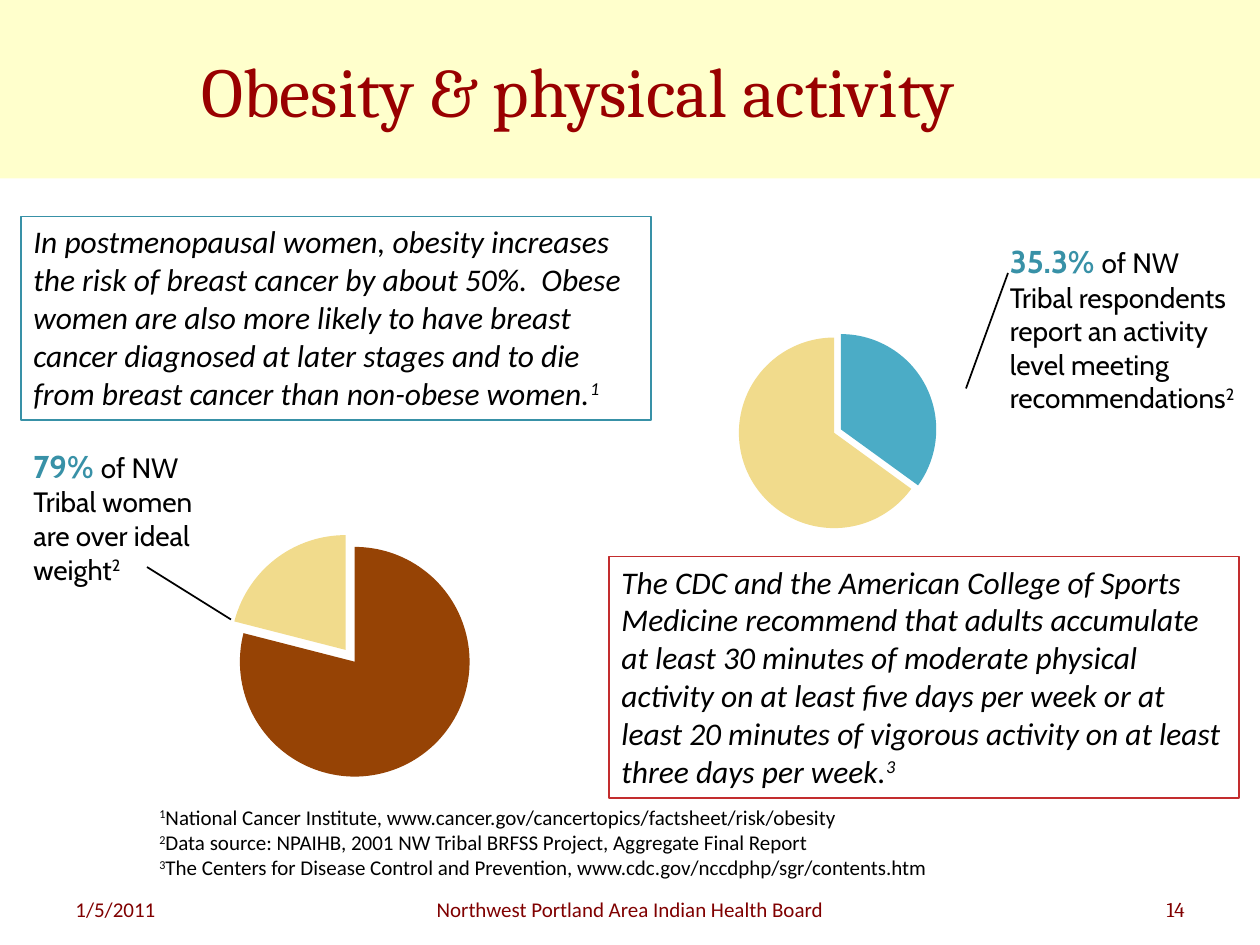
"""Build a slide on obesity and physical activity with two pie charts."""
from lxml.etree import SubElement
from pptx import Presentation
from pptx.chart.data import CategoryChartData
from pptx.dml.color import RGBColor
from pptx.enum.chart import XL_CHART_TYPE
from pptx.enum.shapes import MSO_CONNECTOR, MSO_SHAPE
from pptx.enum.text import MSO_ANCHOR, MSO_AUTO_SIZE, PP_ALIGN
from pptx.oxml import parse_xml
from pptx.oxml.ns import nsdecls, qn
from pptx.util import Inches, Pt

CREAM = RGBColor(0xFF, 0xFF, 0xCC)
RED = RGBColor(0x99, 0x00, 0x00)
MAROON = RGBColor(0x80, 0x00, 0x00)
BLACK = RGBColor(0x00, 0x00, 0x00)
TEAL = RGBColor(0x38, 0x91, 0xA7)
CRIMSON = RGBColor(0xC3, 0x2D, 0x2E)
BROWN = RGBColor(0x96, 0x43, 0x05)
SAND = RGBColor(0xF1, 0xDB, 0x8C)
BLUE = RGBColor(0x4B, 0xAC, 0xC6)

deck = Presentation()
deck.slide_width, deck.slide_height = Inches(10), Inches(7.5)
COLUMN, ROW = deck.slide_width / 120, deck.slide_height / 90


def cells(left, top, width, height):
    """Turn grid columns and rows into lengths."""
    return int(left * COLUMN), int(top * ROW), int(width * COLUMN), int(height * ROW)


def write(para, spans):
    """Add spans of text, size, font, colour and style letters to a paragraph."""
    for text, size, font, colour, style in spans:
        span = para.add_run()
        span.text = text
        span.font.size, span.font.name = Pt(size), font
        span.font.color.rgb = colour
        span.font.bold, span.font.italic = "b" in style, "i" in style
        if "^" in style:
            span.font._element.set("baseline", "30000")


page = deck.slides.add_slide(deck.slide_layouts[5])
title = page.shapes.title
title.left, title.top, title.width, title.height = cells(18, 1, 96, 15)
title.text_frame.vertical_anchor = MSO_ANCHOR.MIDDLE
title.text_frame.paragraphs[0].alignment = PP_ALIGN.LEFT
write(title.text_frame.paragraphs[0],
      [("Obesity & physical activity", 40, "Cambria", RED, "")])

band = page.shapes.add_shape(MSO_SHAPE.RECTANGLE, *cells(0, 0, 120, 17))
band.shadow.inherit = False
band.fill.solid()
band.fill.fore_color.rgb = CREAM
band.line.fill.background()
title._element.addprevious(band._element)

FOOTERS = [
    (35, 50, "Northwest Portland Area Indian Health Board", "Calibri", PP_ALIGN.CENTER),
    (6, 28, "1/5/2011", "Calibri", PP_ALIGN.LEFT),
    (86, 28, "14", "Cambria", PP_ALIGN.RIGHT),
]
for left, width, text, font, alignment in FOOTERS:
    box = page.shapes.add_textbox(*cells(left, 84.8, width, 5.2))
    box.text_frame.word_wrap = True
    box.text_frame.paragraphs[0].alignment = alignment
    write(box.text_frame.paragraphs[0], [(text, 12, font, MAROON, "")])

STATEMENTS = [
    ((2, 20.6, 60, 19.4), TEAL, "1",
     "In postmenopausal women, obesity increases the risk of breast cancer by about "
     "50%.  Obese women are also more likely to have breast cancer diagnosed at later "
     "stages and to die from breast cancer than non-obese women."),
    ((58, 53, 60, 23), CRIMSON, "3",
     "The CDC and the American College of Sports Medicine recommend that adults "
     "accumulate at least 30 minutes of moderate physical activity on at least five "
     "days per week or at least 20 minutes of vigorous activity on at least three "
     "days per week."),
]
for place, colour, note, text in STATEMENTS:
    box = page.shapes.add_shape(MSO_SHAPE.RECTANGLE, *cells(*place))
    box.shadow.inherit = False
    box.fill.background()
    box.line.color.rgb, box.line.width = colour, Pt(0.75)
    frame = box.text_frame
    frame.word_wrap, frame.auto_size = True, MSO_AUTO_SIZE.SHAPE_TO_FIT_TEXT
    frame.vertical_anchor = MSO_ANCHOR.TOP
    frame.paragraphs[0].alignment = PP_ALIGN.LEFT
    write(frame.paragraphs[0], [(text, 18, "Calibri", BLACK, "i"),
                                (note, 18, "Calibri", BLACK, "i^")])

SOURCES = [
    "National Cancer Institute, www.cancer.gov/cancertopics/factsheet/risk/obesity",
    "Data source: NPAIHB, 2001 NW Tribal BRFSS Project, Aggregate Final Report",
    "The Centers for Disease Control and Prevention, www.cdc.gov/nccdphp/sgr/contents.htm",
]
box = page.shapes.add_textbox(*cells(14, 76, 108, 12.1))
frame = box.text_frame
frame.word_wrap, frame.auto_size = True, MSO_AUTO_SIZE.SHAPE_TO_FIT_TEXT
for number, source in enumerate(SOURCES, 1):
    para = frame.paragraphs[0] if number == 1 else frame.add_paragraph()
    write(para, [(str(number), 12, "Calibri", BLACK, "^"),
                 (source, 12, "Calibri", BLACK, "")])

CALLOUTS = [
    ((2, 42, 21, 14.5), "79% ", "of NW Tribal women are over ideal weight",
     (14, 54, 22, 59)),
    ((95, 22.5, 25, 21.4), "35.3% ",
     "of NW Tribal respondents report an activity level meeting recommendations",
     (96, 26, 92, 37)),
]
for place, share, text, ends in CALLOUTS:
    box = page.shapes.add_textbox(*cells(*place))
    frame = box.text_frame
    frame.word_wrap, frame.auto_size = True, MSO_AUTO_SIZE.SHAPE_TO_FIT_TEXT
    write(frame.paragraphs[0], [(share, 18, "Cabin", TEAL, "b"),
                                (text, 16, "Cabin", BLACK, ""),
                                ("2", 16, "Cabin", BLACK, "^")])
    leader = page.shapes.add_connector(MSO_CONNECTOR.STRAIGHT, *cells(*ends))
    leader.line.color.rgb, leader.line.width = BLACK, Pt(1)
    SubElement(leader._element.spPr, qn("a:effectLst"))

PIES = [
    ((15, 48, 39, 26), (79, 21), (BROWN, SAND), 1, (1, 12),
     (0.03, 0.15, 0.9, 0.85)),
    ((60, 30, 39, 22), (35, 65), (BLUE, SAND), 3, (0, 5),
     (0.05, 0.08, 0.91, 0.85)),
]
for place, values, colours, spread, (pulled, distance), plot_area in PIES:
    data = CategoryChartData()
    data.categories = ["1", "2"]
    data.add_series("Series 1", values)
    chart = page.shapes.add_chart(XL_CHART_TYPE.PIE, *cells(*place), data).chart
    chart.has_legend = chart.has_title = False
    chart.font.size, chart.font.name = Pt(10), "Cabin"
    chart.font.color.rgb = BLACK
    plot = chart.plots[0]
    plot.vary_by_categories = True
    series = plot.series[0]
    for index, colour in enumerate(colours):
        fill = series.points[index].format.fill
        fill.solid()
        fill.fore_color.rgb = colour
    slices = series._element.findall(qn("c:dPt"))
    slices[0].addprevious(parse_xml(f'<c:explosion {nsdecls("c")} val="{spread}"/>'))
    for index, piece in enumerate(slices):
        reach = distance if index == pulled else spread
        piece.find(qn("c:spPr")).addprevious(
            parse_xml(f'<c:explosion {nsdecls("c")} val="{reach}"/>'))
    area = chart._chartSpace.find(".//" + qn("c:plotArea"))
    for old in area.findall(qn("c:layout")):
        area.remove(old)
    measures = "".join(f'<c:{name} val="{value}"/>'
                       for name, value in zip("xywh", plot_area))
    area.insert(0, parse_xml(
        f'<c:layout {nsdecls("c")}><c:manualLayout><c:layoutTarget val="inner"/>'
        f'<c:xMode val="edge"/><c:yMode val="edge"/>{measures}'
        '</c:manualLayout></c:layout>'))

deck.save("out.pptx")
